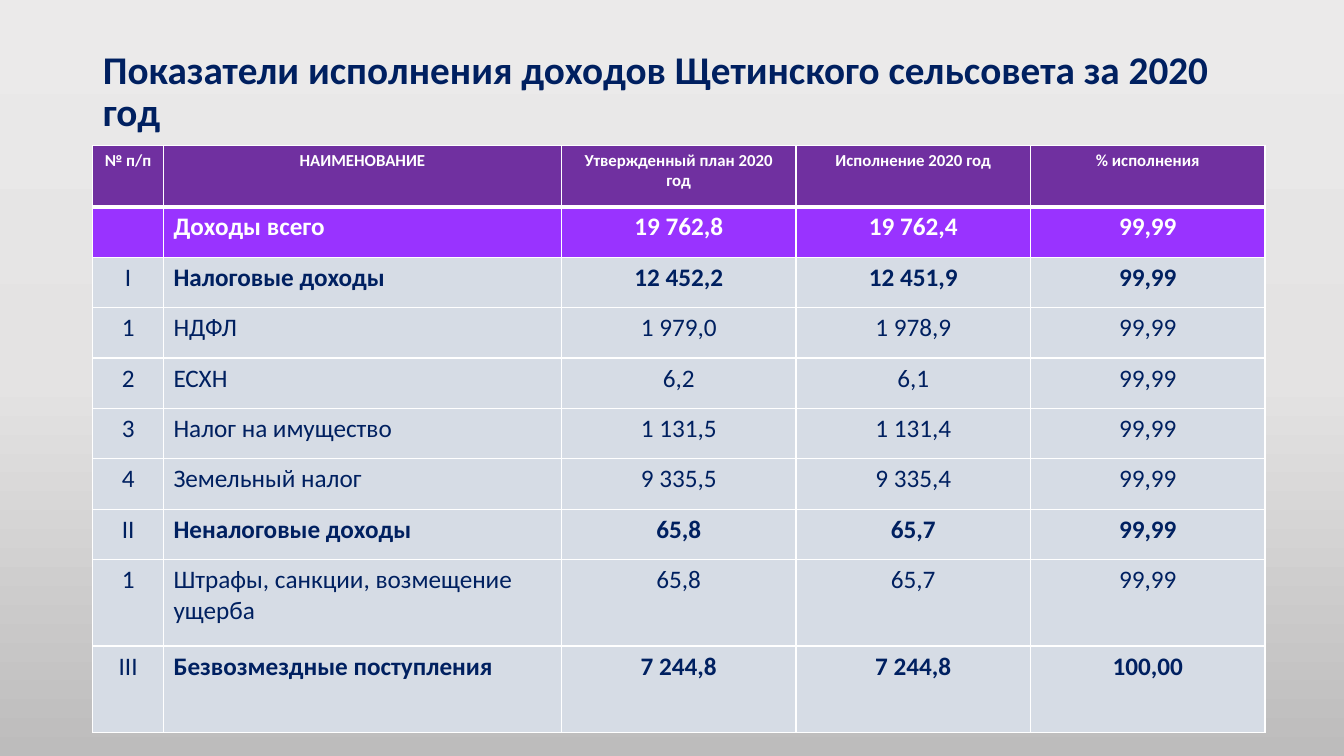
from dataclasses import dataclass

from lxml import etree
from pptx import Presentation
from pptx.dml.color import RGBColor
from pptx.enum import text as t
from pptx.oxml import ns
from pptx.util import Cm, Pt


@dataclass(frozen=True)
class Theme:
    font: str = "Calibri"
    navy: str = "002060"
    white: str = "FFFFFF"
    head: str = "7030A0"
    total: str = "9933FF"
    body: str = "D6DCE5"
    back: tuple = ((0, "EBEAEA"), (50, "E4E3E3"), (100, "BDBCBC"))
    title_size: int = 28
    head_size: int = 12
    body_size: int = 18


THEME = Theme()
COLS = [1.78, 10.03, 5.91, 5.91, 5.91]
HIGHS = [1.55] + [1.27] * 7 + [2.18] * 2
ROWS = [
    ("№ п/п", "НАИМЕНОВАНИЕ", "Утвержденный план 2020 год", "Исполнение 2020 год", "% исполнения"),
    ("", "Доходы всего", "19 762,8", "19 762,4", "99,99"),
    ("I", "Налоговые доходы", "12 452,2", "12 451,9", "99,99"),
    ("1", "НДФЛ", "1 979,0", "1 978,9", "99,99"),
    ("2", "ЕСХН", "6,2", "6,1", "99,99"),
    ("3", "Налог на имущество", "1 131,5", "1 131,4", "99,99"),
    ("4", "Земельный налог", "9 335,5", "9 335,4", "99,99"),
    ("II", "Неналоговые доходы", "65,8", "65,7", "99,99"),
    ("1", "Штрафы, санкции, возмещение ущерба", "65,8", "65,7", "99,99"),
    ("III", "Безвозмездные поступления", "7 244,8", "7 244,8", "100,00"),
]


def add_run(par, words, size, color, bold):
    run = par.add_run()
    run.text = words
    font = run.font
    font.name, font.size, font.bold = THEME.font, Pt(size), bold
    font.color.rgb = RGBColor.from_string(color)


def add_rgb(parent, color):
    etree.SubElement(parent, ns.qn("a:srgbClr"), val=color)


# Background gradient, top to bottom
def paint_back(slide):
    fill = slide.background.fill
    fill.gradient()
    fill.gradient_angle = 270
    stops = slide.element.find(".//" + ns.qn("a:gsLst"))
    for stop in list(stops):
        stops.remove(stop)
    for place, color in THEME.back:
        add_rgb(etree.SubElement(stops, ns.qn("a:gs"), pos=str(place * 1000)), color)


# Title
def set_title(slide, left, top, width, height):
    title = slide.shapes.title
    title.left, title.top, title.width, title.height = left, top, width, height
    frame = title.text_frame
    frame.word_wrap = True
    frame.auto_size = t.MSO_AUTO_SIZE.NONE
    frame.vertical_anchor = t.MSO_ANCHOR.MIDDLE
    par = frame.paragraphs[0]
    par.alignment = t.PP_ALIGN.LEFT
    par.line_spacing = 0.9
    add_run(par, "Показатели исполнения доходов Щетинского сельсовета за 2020 год",
            THEME.title_size, THEME.navy, True)


def set_edges(cell, row):
    props = cell._tc.get_or_add_tcPr()
    thick = {"T": row == 1, "B": row == 0}
    for side in "LRTB":
        width = Pt(3 if thick.get(side) else 1)
        line = etree.SubElement(props, ns.qn("a:ln" + side), w=str(width))
        add_rgb(etree.SubElement(line, ns.qn("a:solidFill")), THEME.white)


def fill_cell(cell, row, col, words):
    set_edges(cell, row)
    cell.fill.solid()
    shade = {0: THEME.head, 1: THEME.total}.get(row, THEME.body)
    cell.fill.fore_color.rgb = RGBColor.from_string(shade)
    par = cell.text_frame.paragraphs[0]
    size = THEME.body_size if row else THEME.head_size
    par.font.size = Pt(size)
    if row == 0 or col != 1:
        par.alignment = t.PP_ALIGN.CENTER
    if words:
        # Section rows are bold except for their number
        bold = row < 2 or (col > 0 and ROWS[row][0] in ("I", "II", "III"))
        add_run(par, words, size, THEME.white if row < 2 else THEME.navy, bold)


# Income table
def add_income(slide, left, top, width, height):
    table = slide.shapes.add_table(len(ROWS), len(COLS), left, top, width, height).table
    table.horz_banding = False
    for col, wide in zip(table.columns, COLS):
        col.width = Cm(wide)
    for row, high in zip(table.rows, HIGHS):
        row.height = Cm(high)
    for r, words in enumerate(ROWS):
        for c, word in enumerate(words):
            fill_cell(table.cell(r, c), r, c, word)


def main():
    deck = Presentation()
    deck.slide_width, deck.slide_height = Cm(33.87), Cm(19.05)
    slide = deck.slides.add_slide(deck.slide_layouts[5])
    left, top, width, high = Cm(2.34), Cm(1.02), Cm(sum(COLS)), Cm(2.64)
    paint_back(slide)
    set_title(slide, left, top, width, high)
    add_income(slide, left, top + high, width, Cm(sum(HIGHS)))
    deck.save("out.pptx")


if __name__ == "__main__":
    main()
